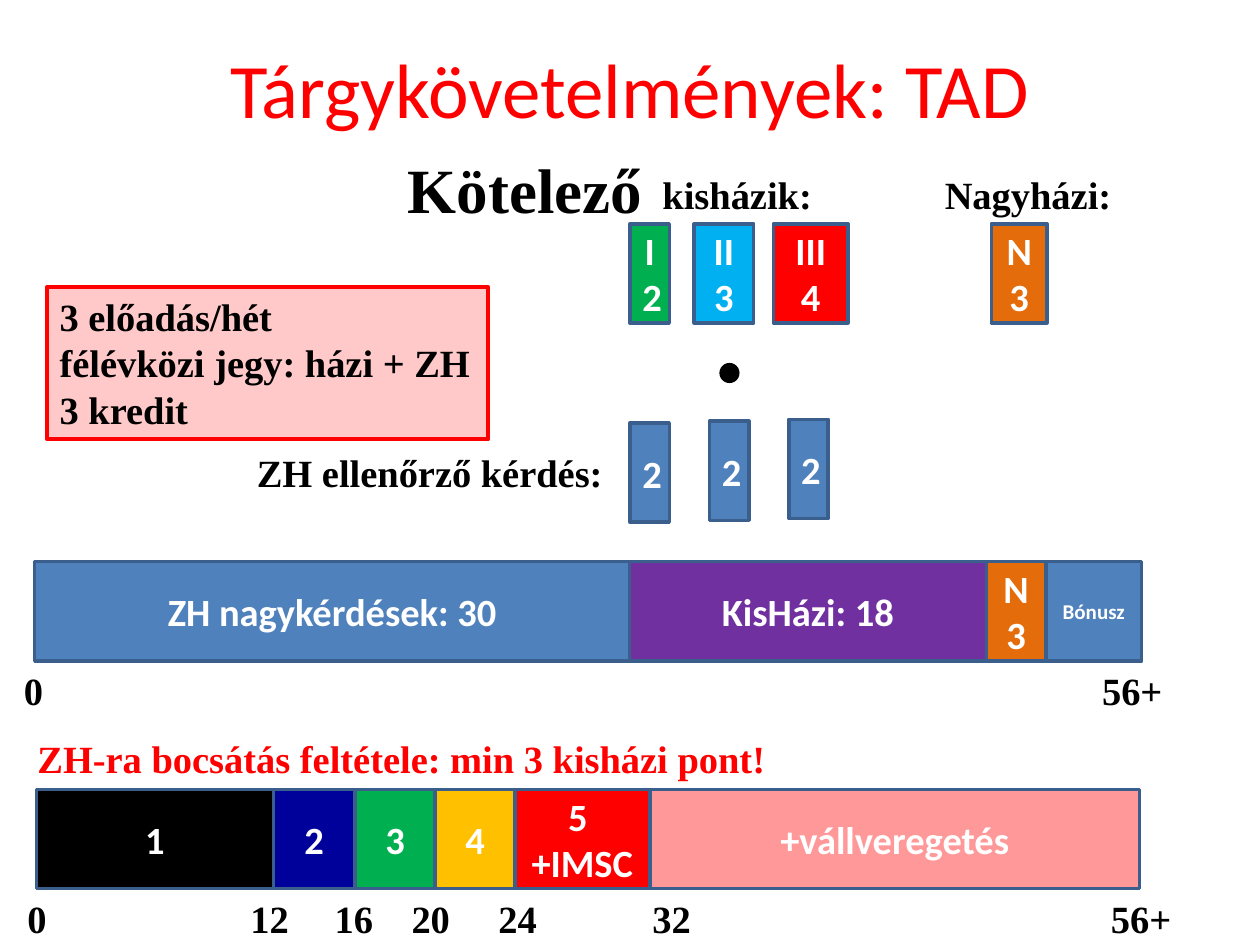
import pptx
import pptx.dml.color
import pptx.enum.shapes
import pptx.enum.text
import pptx.util
from lxml import etree
from pptx.util import Pt

COLORS = {
    "black": "000000", "white": "FFFFFF", "red": "FF0000", "border": "3A5F8C",
    "blue": "4F81BD", "navy": "00009A", "sky": "00B0F0", "green": "00B050",
    "orange": "E46C0A", "amber": "FFC000", "purple": "7030A0", "pink": "FF9999",
}
SERIF, SANS = "Times New Roman", "Calibri"
BLOCK_HEIGHT = 56.7
LABEL_HEIGHT = 33.8
SHAPES = pptx.enum.shapes.MSO_SHAPE
ALIGN = pptx.enum.text.PP_ALIGN
ANCHOR = pptx.enum.text.MSO_ANCHOR


def rgb(name):
    """Return the named colour."""
    return pptx.dml.color.RGBColor.from_string(COLORS[name])


def write(frame, text, size, font, color, bold=True, align=ALIGN.LEFT):
    """Fill a text frame, one paragraph for each line."""
    frame.text = text
    for para in frame.paragraphs:
        para.alignment = align
        para.font.size = Pt(size)
        para.font.name = font
        para.font.bold = bold
        para.font.color.rgb = rgb(color)


def add_label(page, left, top, width, text, size=22, color="black", height=LABEL_HEIGHT):
    """Add a single-line serif label."""
    box = page.shapes.add_textbox(Pt(left), Pt(top), Pt(width), Pt(height))
    box.text_frame.word_wrap = False
    write(box.text_frame, text, size, SERIF, color)


def add_plain_shape(page, kind, box, fill, border=None, weight=2):
    """Add a flat shape with an optional border."""
    shape = page.shapes.add_shape(kind, *[Pt(length) for length in box])
    shape.shadow.inherit = False
    shape.fill.solid()
    shape.fill.fore_color.rgb = rgb(fill)
    if border:
        shape.line.color.rgb = rgb(border)
        shape.line.width = Pt(weight)
    else:
        shape.line.fill.background()
    return shape


def add_block(page, left, top, width, text, fill, size=22):
    """Add a bordered block with centred white text."""
    box = (left, top, width, BLOCK_HEIGHT)
    block = add_plain_shape(page, SHAPES.RECTANGLE, box, fill, "border")
    block.text_frame.word_wrap = True
    block.text_frame.vertical_anchor = ANCHOR.MIDDLE
    write(block.text_frame, text, size, SANS, "white", align=ALIGN.CENTER)


def add_title(page, left, top, width, height):
    """Add the slide title."""
    box = page.shapes.add_textbox(Pt(left), Pt(top), Pt(width), Pt(height))
    box.text_frame.word_wrap = True
    box.text_frame.vertical_anchor = ANCHOR.MIDDLE
    write(box.text_frame, "Tárgykövetelmények: TAD", 44, SANS, "red", False, ALIGN.CENTER)


def add_homework(page, left, top):
    """Add the compulsory homework headings and their blocks."""
    add_label(page, left, top, 159, "Kötelező", size=36, height=51)
    add_label(page, left + 145.5, top + 11.5, 100.8, "kisházik:")
    add_label(page, left + 306.8, top + 11.5, 111, "Nagyházi:")
    blocks = [
        (134, 22.5, "I2", "green"), (170.7, 34, "II3", "sky"),
        (216, 42.5, "III\n4", "red"), (340.6, 31.7, "N\n3", "orange"),
    ]
    for offset, width, text, fill in blocks:
        add_block(page, left + offset, top + 45.3, width, text, fill)


def add_course_facts(page, left, top, width, height):
    """Add the translucent box of course facts."""
    box = (left, top, width, height)
    facts = add_plain_shape(page, SHAPES.RECTANGLE, box, "pink", "red", 2.25)
    color = facts.fill._xPr.find(".//" + pptx.oxml.ns.qn("a:srgbClr"))
    etree.SubElement(color, pptx.oxml.ns.qn("a:alpha"), val="53000")
    facts.text_frame.word_wrap = False
    facts.text_frame.vertical_anchor = ANCHOR.TOP
    text = "3 előadás/hét\nfélévközi jegy: házi + ZH\n3 kredit"
    write(facts.text_frame, text, 22, SERIF, "black")


def add_test_questions(page, left, top):
    """Add the multiplication dot and the row of test question blocks."""
    add_plain_shape(page, SHAPES.OVAL, (left + 271.4, top - 32.4, 11.5, 11.5), "black")
    add_label(page, left, top + 13, 214.6, "ZH ellenőrző kérdés:")
    for index in range(3):
        add_block(page, left + 220.3 + 45.4 * index, top + 2 - 1.1 * index, 22.5, "2", "blue")


def add_bar(page, left, top, parts):
    """Add adjoining blocks from left to right."""
    for text, width, fill, size in parts:
        add_block(page, left, top, width, text, fill, size)
        left += width


def add_ticks(page, left, top, ticks):
    """Add the scale labels under a bar, each as wide as its text."""
    for offset, text in ticks:
        add_label(page, left + offset, top, 14.6 + 11.8 * len(text), text)


def add_score_bar(page, left, top):
    """Add the bar of points available, drawn to scale."""
    unit = 11.33
    parts = [
        ("ZH nagykérdések: 30", 30 * unit, "blue", 22),
        ("KisHázi: 18", 18 * unit, "purple", 22),
        ("N\n3", 3 * unit, "orange", 22),
        ("Bónusz", 54.8, "blue", 12),
    ]
    add_bar(page, left, top, parts)
    add_ticks(page, left, top + 56.7, [(-13.2, "0"), (602.9, "56+")])


def add_grade_bar(page, left, top):
    """Add the entry condition and the bar of grade limits."""
    add_label(page, left - 6.5, top - 34.5, 434, "ZH-ra bocsátás feltétele: min 3 kisházi pont!", color="red")
    parts = [
        ("1", 135.4, "black", 22), ("2", 46.6, "navy", 22),
        ("3", 45.9, "green", 22), ("4", 45.6, "amber", 22),
        ("5 \n+IMSC", 77, "red", 22), ("+vállveregetés", 280, "pink", 22),
    ]
    add_bar(page, left, top, parts)
    ticks = [
        (-12.3, "0"), (115.2, "12"), (163.4, "16"), (207.3, "20"),
        (257, "24"), (344.9, "32"), (607, "56+"),
    ]
    add_ticks(page, left, top + 56.5, ticks)


def main():
    """Build and save the slide."""
    deck = pptx.Presentation()
    deck.slide_width, deck.slide_height = Pt(720), Pt(540)
    page = deck.slides.add_slide(deck.slide_layouts[6])
    add_title(page, 36, 5, 648, 90)
    add_homework(page, 226, 82.6)
    add_course_facts(page, 27, 164, 252, 87.1)
    add_test_questions(page, 139.7, 239.8)
    add_score_bar(page, 19.8, 321)
    add_grade_bar(page, 20.8, 451.2)
    deck.save("out.pptx")


if __name__ == "__main__":
    main()
